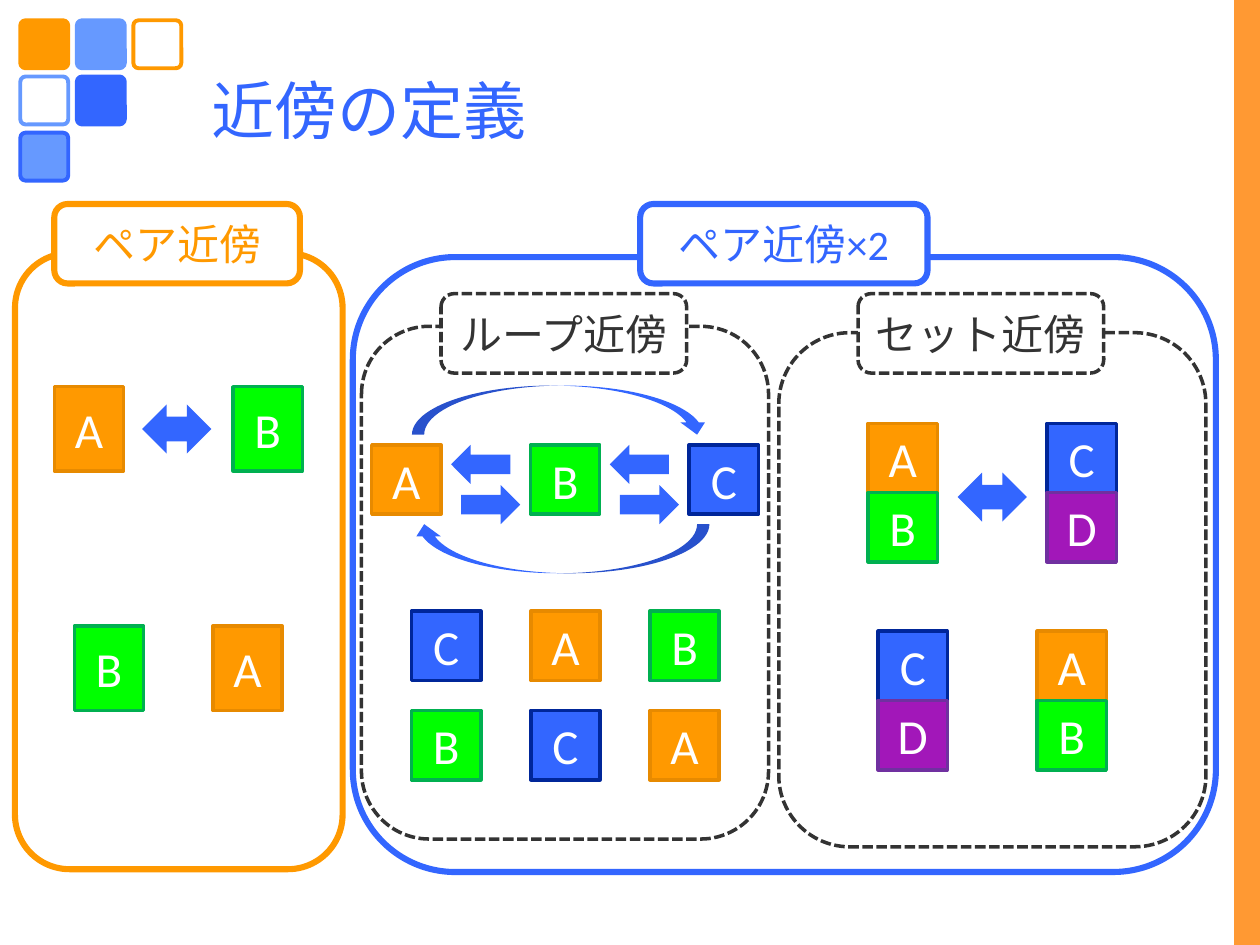
import pptx
import pptx.dml.color
import pptx.enum.dml
import pptx.enum.shapes
import pptx.enum.text
import pptx.util

Pt = pptx.util.Pt
SHAPES = pptx.enum.shapes.MSO_SHAPE
ALIGN = pptx.enum.text.PP_ALIGN

BLUE, LIGHT_BLUE, ORANGE = "3366FF", "6699FF", "FF9900"
WHITE, GRAY, EDGE_ORANGE = "FFFFFF", "333333", "FF9933"
TILE_COLORS = {
    "A": (ORANGE, "E78A00"),
    "B": ("00FF00", "00B050"),
    "C": (BLUE, "002699"),
    "D": ("A217B9", "7030A0"),
}
TILE = 39.6


def color(value):
    return pptx.dml.color.RGBColor.from_string(value)


def add_text(shape, text, size, font_color, align):
    frame = shape.text_frame
    frame.word_wrap = True
    frame.vertical_anchor = pptx.enum.text.MSO_ANCHOR.MIDDLE
    para = frame.paragraphs[0]
    para.alignment = align
    span = para.add_run()
    span.text = text
    span.font.size = Pt(size)
    span.font.name = "Calibri"
    span.font.color.rgb = color(font_color)


def add_box(page, kind, left, top, width, height, fill=None, line=None, weight=2, dashed=False):
    box = page.shapes.add_shape(kind, Pt(left), Pt(top), Pt(width), Pt(height))
    box.shadow.inherit = False
    if fill:
        box.fill.solid()
        box.fill.fore_color.rgb = color(fill)
    else:
        box.fill.background()
    if line:
        box.line.color.rgb = color(line)
        box.line.width = Pt(weight)
        if dashed:
            box.line.dash_style = pptx.enum.dml.MSO_LINE.SQUARE_DOT
    else:
        box.line.fill.background()
    return box


def add_tile(page, letter, left, top, height=TILE):
    fill, line = TILE_COLORS[letter]
    tile = add_box(page, SHAPES.RECTANGLE, left, top, TILE, height, fill, line)
    add_text(tile, letter, 28, WHITE, ALIGN.CENTER)


def add_row(page, letters, left, top, step, height=TILE):
    for index, letter in enumerate(letters):
        add_tile(page, letter, left + index * step, top, height)


def add_stack(page, letters, left, top):
    for index, letter in enumerate(letters):
        add_tile(page, letter, left, top + index * TILE)


def add_arrow(page, kind, left, top, width, height):
    return add_box(page, kind, left, top, width, height, BLUE)


def add_panel(page, frame, label, text, line, weight, dashed=False):
    add_box(page, SHAPES.ROUNDED_RECTANGLE, *frame, None, line, weight, dashed)
    tab = add_box(page, SHAPES.ROUNDED_RECTANGLE, *label, WHITE, line, weight, dashed)
    add_text(tab, text, 24, line, ALIGN.CENTER)


def add_decoration(page):
    blocks = [
        (0, 0, ORANGE, ORANGE), (1, 0, LIGHT_BLUE, LIGHT_BLUE), (2, 0, WHITE, ORANGE),
        (0, 1, WHITE, LIGHT_BLUE), (1, 1, BLUE, BLUE),
        (0, 2, LIGHT_BLUE, BLUE),
    ]
    for column, row, fill, line in blocks:
        block = add_box(page, SHAPES.ROUNDED_RECTANGLE, 11.6 + column * 32.3,
                        11.6 + row * 32.1, 27.4, 27.4, fill, line, 2.25)
        block.adjustments[0] = 0.11
    add_box(page, SHAPES.RECTANGLE, 705.6, 0, 14.4, 540, EDGE_ORANGE, EDGE_ORANGE, 0.75)


def add_title(page):
    title = page.shapes.add_textbox(Pt(113.8), Pt(23.8), Pt(552), Pt(77.8))
    add_text(title, "近傍の定義", 36, BLUE, ALIGN.LEFT)


def add_pair(page):
    add_panel(page, (8.6, 144.7, 187.2, 352), (31, 116.6, 140.4, 45.4), "ペア近傍", ORANGE, 3.5)
    add_row(page, "AB", 31, 221, 102.2, 48.2)
    add_row(page, "BA", 42.5, 357.8, 79.2, 48.2)
    add_arrow(page, SHAPES.LEFT_RIGHT_ARROW, 81.2, 231.1, TILE, 28.1)


def add_loop(page):
    add_panel(page, (206.6, 186.5, 232.6, 293), (252, 167.8, 140.4, 45.4),
              "ループ近傍", GRAY, 2, True)
    add_row(page, "ABC", 212.4, 254.2, 90.7)
    add_row(page, "CAB", 235.2, 349.2, 68.1)
    add_row(page, "BCA", 235.2, 406, 68.1)
    for index in range(2):
        shift = index * 90.7
        add_arrow(page, SHAPES.LEFT_ARROW, 257.8 + shift, 254.2, 33.8, 22.3)
        add_arrow(page, SHAPES.RIGHT_ARROW, 263.5 + shift, 277.2, 33.8, 22.3)
    add_arrow(page, SHAPES.CURVED_DOWN_ARROW, 235.4, 220.3, 170, 28.1)
    back = add_arrow(page, SHAPES.CURVED_UP_ARROW, 235.4, 299.5, 170, 28.1)
    back._element.spPr.xfrm.set("flipH", "1")


def add_set(page):
    add_panel(page, (445, 190.1, 244.1, 293.8), (490.3, 167.8, 140.4, 45.4),
              "セット近傍", GRAY, 2, True)
    add_stack(page, "AB", 496.1, 241.9)
    add_stack(page, "CD", 598.3, 241.9)
    add_stack(page, "CD", 501.8, 360.7)
    add_stack(page, "AB", 592.6, 360.7)
    add_arrow(page, SHAPES.LEFT_RIGHT_ARROW, 547.2, 270, TILE, 28.1)


def main():
    deck = pptx.Presentation()
    deck.slide_width, deck.slide_height = Pt(720), Pt(540)
    page = deck.slides.add_slide(deck.slide_layouts[6])
    add_decoration(page)
    add_set(page)
    add_title(page)
    add_loop(page)
    add_pair(page)
    add_panel(page, (201.6, 146.9, 493.2, 351.4), (365.8, 116.6, 164.2, 45.4),
              "ペア近傍×2", BLUE, 3.5)
    deck.save("out.pptx")


if __name__ == "__main__":
    main()
